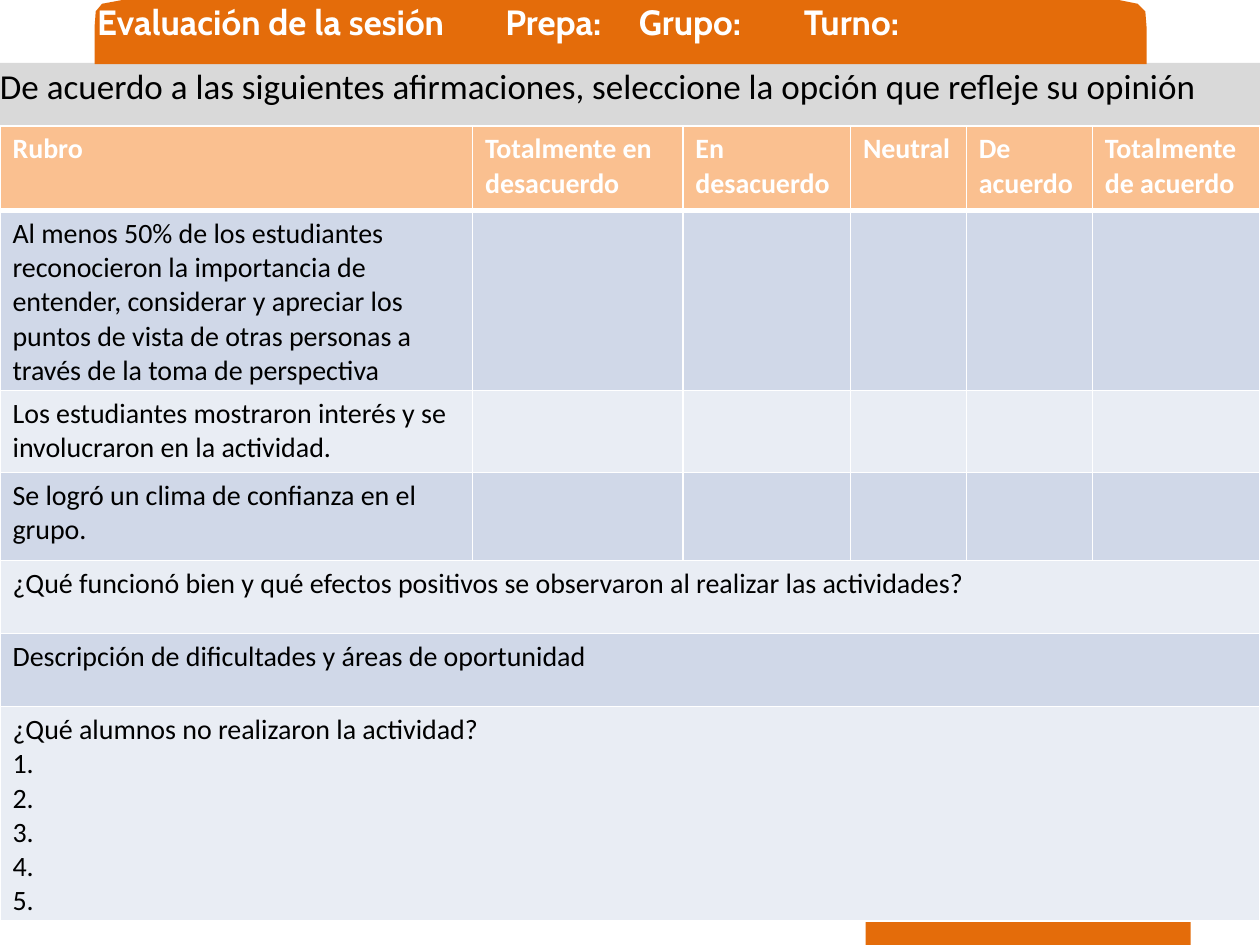
from lxml import etree
from pptx import Presentation
from pptx.dml.color import RGBColor
from pptx.enum.shapes import MSO_SHAPE
from pptx.enum.text import MSO_ANCHOR, PP_ALIGN
from pptx.oxml.ns import qn
from pptx.util import Inches, Pt

RECTANGLE = MSO_SHAPE.RECTANGLE
TOP, LEFT = MSO_ANCHOR.TOP, PP_ALIGN.LEFT

ORANGE, GREY, WHITE, BLACK = "E46C0A", "D9D9D9", "FFFFFF", "000000"
HEADER_FILL, BANDS = "FAC090", ("D0D8E8", "E9EDF4")

HEADING = "Evaluación de la sesión\tPrepa:\tGrupo:\tTurno:"
HEADING_TABS = (3.24, 4.3, 5.61)
INSTRUCTION = "De acuerdo a las siguientes afirmaciones, seleccione la opción que refleje su opinión"
COLUMNS = [
    ("Rubro", 3.75),
    ("Totalmente en desacuerdo", 1.67),
    ("En desacuerdo", 1.33),
    ("Neutral", 0.92),
    ("De acuerdo", 1),
    ("Totalmente de acuerdo", 1.33),
]
STATEMENTS = [
    ("Al menos 50% de los estudiantes reconocieron la importancia de entender, "
     "considerar y apreciar los puntos de vista de otras personas a través de la "
     "toma de perspectiva", 0.78),
    ("Los estudiantes mostraron interés y se involucraron en la actividad.", 0.65),
    ("Se logró un clima de confianza en el grupo.", 0.7),
]
QUESTIONS = [
    ("¿Qué funcionó bien y qué efectos positivos se observaron al realizar las actividades?", 0.58),
    ("Descripción de dificultades y áreas de oportunidad", 0.58),
    ("¿Qué alumnos no realizaron la actividad?\n1.\n2.\n3.\n4.\n5.", 0.78),
]
HEADER_HEIGHT = 0.67
BANNER_HUNDREDTHS = [(858, 0), (97, 0), (81, 3), (76, 9), (75, 22), (75, 51),
                     (910, 51), (910, 22), (909, 9), (903, 3), (888, 0)]


def color(value):
    return RGBColor.from_string(value)


def write(frame, text, size=16, font="Calibri", ink=BLACK, bold=False):
    frame.text = text
    frame.word_wrap = True
    for paragraph in frame.paragraphs:
        paragraph.alignment = LEFT
        for run in paragraph.runs:
            run.font.size = Pt(size)
            run.font.name = font
            run.font.bold = bold
            run.font.color.rgb = color(ink)


def paint(shape, fill):
    shape.shadow.inherit = False
    shape.fill.solid()
    shape.fill.fore_color.rgb = color(fill)
    shape.line.fill.background()


def add_bar(slide, box, fill):
    bar = slide.shapes.add_shape(RECTANGLE, *map(Inches, box))
    paint(bar, fill)
    return bar


def set_margins(frame, top=0):
    frame.margin_left = frame.margin_right = frame.margin_bottom = 0
    frame.margin_top = Inches(top)
    frame.vertical_anchor = TOP


def add_banner(slide):
    builder = slide.shapes.build_freeform(*BANNER_HUNDREDTHS[0], scale=Inches(0.01))
    builder.add_line_segments(BANNER_HUNDREDTHS[1:], close=True)
    paint(builder.convert_to_shape(), ORANGE)


def place_heading(slide):
    heading = slide.shapes.title
    heading.element.getparent().append(heading.element)
    heading.left, heading.top, heading.width, heading.height = map(Inches, (0.75, 0, 8.33, 0.35))
    set_margins(heading.text_frame)
    write(heading.text_frame, HEADING, size=20, font="Cabin", ink=WHITE, bold=True)
    paragraph = heading.text_frame.paragraphs[0]
    paragraph.space_before = Pt(0)
    properties = paragraph._p.get_or_add_pPr()
    properties.set("marL", str(Inches(0.02)))
    stops = etree.SubElement(properties, qn("a:tabLst"))
    for position in HEADING_TABS:
        etree.SubElement(stops, qn("a:tab"), pos=str(Inches(position)), algn="l")


def style_cell(cell, fill, bottom=1):
    cell.margin_bottom = Inches(0.02)
    cell.fill.solid()
    cell.fill.fore_color.rgb = color(fill)
    properties = cell._tc.get_or_add_tcPr()
    for index, (side, width) in enumerate((("L", 1), ("R", 1), ("T", 1), ("B", bottom))):
        border = etree.Element(qn(f"a:ln{side}"), w=str(Pt(width)))
        solid = etree.SubElement(border, qn("a:solidFill"))
        etree.SubElement(solid, qn("a:srgbClr"), val=WHITE)
        properties.insert(index, border)


def add_survey(slide):
    body = STATEMENTS + QUESTIONS
    heights = [HEADER_HEIGHT] + [height for _, height in body]
    survey = slide.shapes.add_table(len(heights), len(COLUMNS), 0, Inches(1),
                                    Inches(10), Inches(sum(heights))).table
    for row, height in zip(survey.rows, heights):
        row.height = Inches(height)
    for index, (label, width) in enumerate(COLUMNS):
        survey.columns[index].width = Inches(width)
        cell = survey.cell(0, index)
        write(cell.text_frame, label, ink=WHITE, bold=True)
        style_cell(cell, HEADER_FILL, bottom=3)
    for number, (text, _) in enumerate(body):
        row = number + 1
        for index in range(len(COLUMNS)):
            style_cell(survey.cell(row, index), BANDS[number % 2])
        write(survey.cell(row, 0).text_frame, text)
        if number >= len(STATEMENTS):
            survey.cell(row, 0).merge(survey.cell(row, len(COLUMNS) - 1))


def main():
    """Build the session evaluation form slide."""
    deck = Presentation()
    deck.slide_width, deck.slide_height = Inches(10), Inches(7.5)
    slide = deck.slides.add_slide(deck.slide_layouts[5])
    add_bar(slide, (6.87, 7.1, 2.58, 0.4), ORANGE)
    panel = add_bar(slide, (0, 0.5, 10, 6.67), GREY)
    set_margins(panel.text_frame, 0.01)
    write(panel.text_frame, INSTRUCTION, size=20)
    add_banner(slide)
    place_heading(slide)
    add_survey(slide)
    deck.save("out.pptx")


if __name__ == "__main__":
    main()
